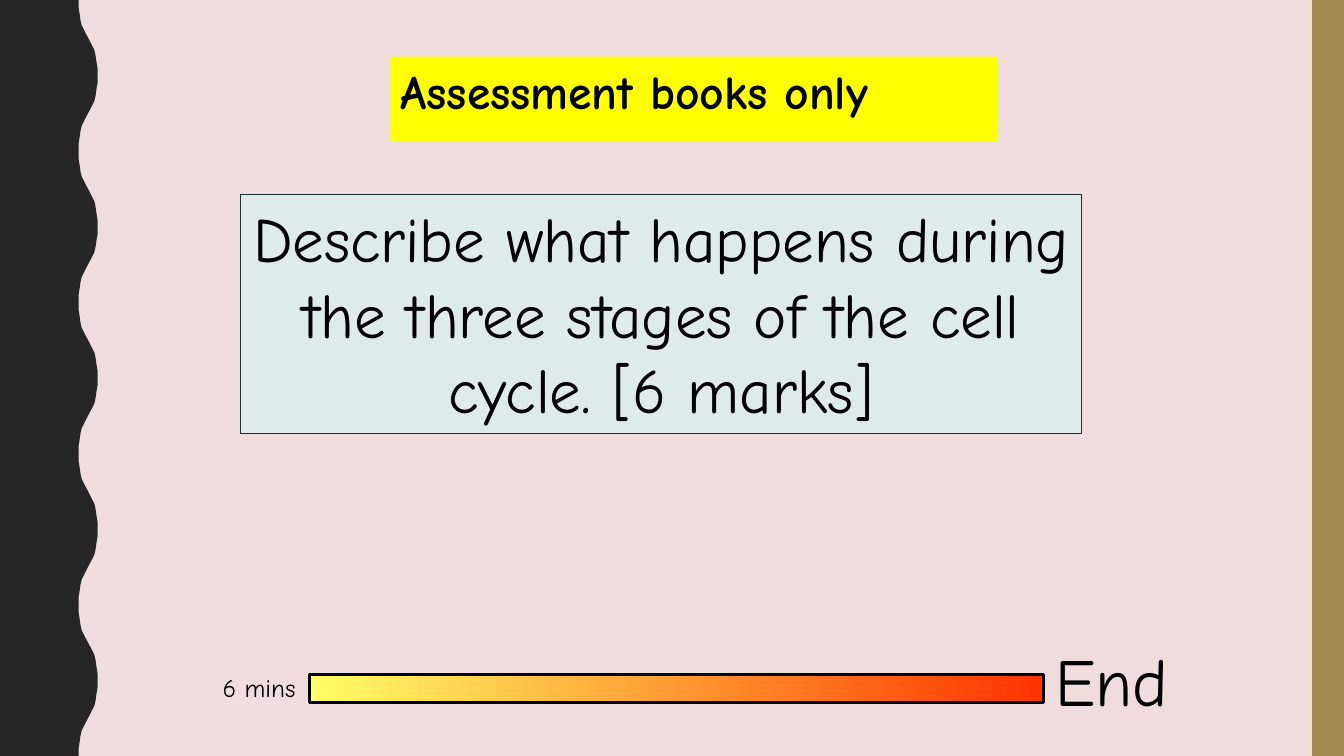
from pptx import Presentation
from pptx.dml.color import RGBColor
from pptx.enum.shapes import MSO_SHAPE
from pptx.enum.text import MSO_ANCHOR, MSO_AUTO_SIZE, PP_ALIGN
from pptx.util import Cm, Pt

FONT = "Comic Neue"
BLACK = RGBColor(0x00, 0x00, 0x00)
PINK = RGBColor(0xEE, 0xDD, 0xDC)
CHARCOAL = RGBColor(0x26, 0x26, 0x26)
GOLD = RGBColor(0xA3, 0x8D, 0x51)
YELLOW = RGBColor(0xFF, 0xFF, 0x00)
MINT = RGBColor(0xDE, 0xEB, 0xE8)
DARK_TEAL = RGBColor(0x1B, 0x2F, 0x36)
TIMER_START = RGBColor(0xFF, 0xFF, 0x66)
TIMER_END = RGBColor(0xFF, 0x33, 0x00)


def write(box, text, size, bold=False, align=PP_ALIGN.LEFT, wrap=True,
          anchor=MSO_ANCHOR.TOP):
    frame = box.text_frame
    frame.word_wrap = wrap
    frame.auto_size = MSO_AUTO_SIZE.SHAPE_TO_FIT_TEXT
    frame.vertical_anchor = anchor
    para = frame.paragraphs[0]
    para.alignment = align
    span = para.add_run()
    span.text = text
    span.font.name = FONT
    span.font.size = Pt(size)
    span.font.bold = bold
    span.font.color.rgb = BLACK


def style(shape, fill=None, line=None, width=0.75):
    shape.shadow.inherit = False
    if fill is None:
        shape.fill.background()
    else:
        shape.fill.solid()
        shape.fill.fore_color.rgb = fill
    if line is None:
        shape.line.fill.background()
    else:
        shape.line.color.rgb = line
        shape.line.width = Pt(width)


deck = Presentation()
deck.slide_width, deck.slide_height = Cm(33.87), Cm(19.05)
page = deck.slides.add_slide(deck.slide_layouts[5])
page.background.fill.solid()
page.background.fill.fore_color.rgb = PINK
shapes = page.shapes

# Wavy left edge: each half wave is a quarter curve and its mirror image
half_wave = 19.05 / 10
trough, crest = 1.98, 2.46
quarter = [(1.98, 0), (1.98, 0.18), (2.01, 0.36), (2.03, 0.51),
           (2.06, 0.64), (2.11, 0.74), (2.16, 0.84), (2.22, 0.95)]
rise = quarter + [(trough + crest - x, half_wave - y)
                  for x, y in reversed(quarter[:-1])]
edge = []
for index in range(10):
    for x, y in rise:
        across = x if index % 2 == 0 else trough + crest - x
        edge.append((Cm(across), Cm(index * half_wave + y)))
builder = shapes.build_freeform(0, 0)
builder.add_line_segments(edge + [(0, Cm(19.05))], close=True)
style(builder.convert_to_shape(), CHARCOAL)

# Gold right band
band = shapes.add_shape(MSO_SHAPE.RECTANGLE, Cm(33.07), 0, Cm(0.8), Cm(19.05))
style(band, GOLD)

# Timer: gradient bar with a frame on top
timer_area = Cm(7.8), Cm(16.99), Cm(18.49), Cm(0.71)
timer_bar = shapes.add_shape(MSO_SHAPE.RECTANGLE, *timer_area)
style(timer_bar)
timer_bar.fill.gradient()
timer_bar.fill.gradient_angle = 0
for stop, colour in zip(timer_bar.fill.gradient_stops, (TIMER_START, TIMER_END)):
    stop.color.rgb = colour
timer_frame = shapes.add_shape(MSO_SHAPE.RECTANGLE, *timer_area)
style(timer_frame, line=BLACK, width=2.25)

# Timer labels
end_label = shapes.add_textbox(Cm(26.34), Cm(15.98), Cm(3.53), Cm(2.29))
write(end_label, "End", 48, wrap=False)
minutes_label = shapes.add_textbox(Cm(5.36), Cm(16.81), Cm(2.41), Cm(1.02))
write(minutes_label, "6 mins", 18, wrap=False)

# Question
question = shapes.add_shape(MSO_SHAPE.RECTANGLE, Cm(6.07), Cm(4.9), Cm(21.18), Cm(6.02))
style(question, MINT, DARK_TEAL)
write(question, "Describe what happens during the three stages of the cell cycle. [6 marks]",
      45, align=PP_ALIGN.CENTER)

# Heading
heading = shapes.title
heading.left, heading.top, heading.width, heading.height = (
    Cm(9.84), Cm(1.43), Cm(15.3), Cm(1.7))
heading.fill.solid()
heading.fill.fore_color.rgb = YELLOW
write(heading, "Assessment books only", 34, bold=True)

deck.save("out.pptx")
